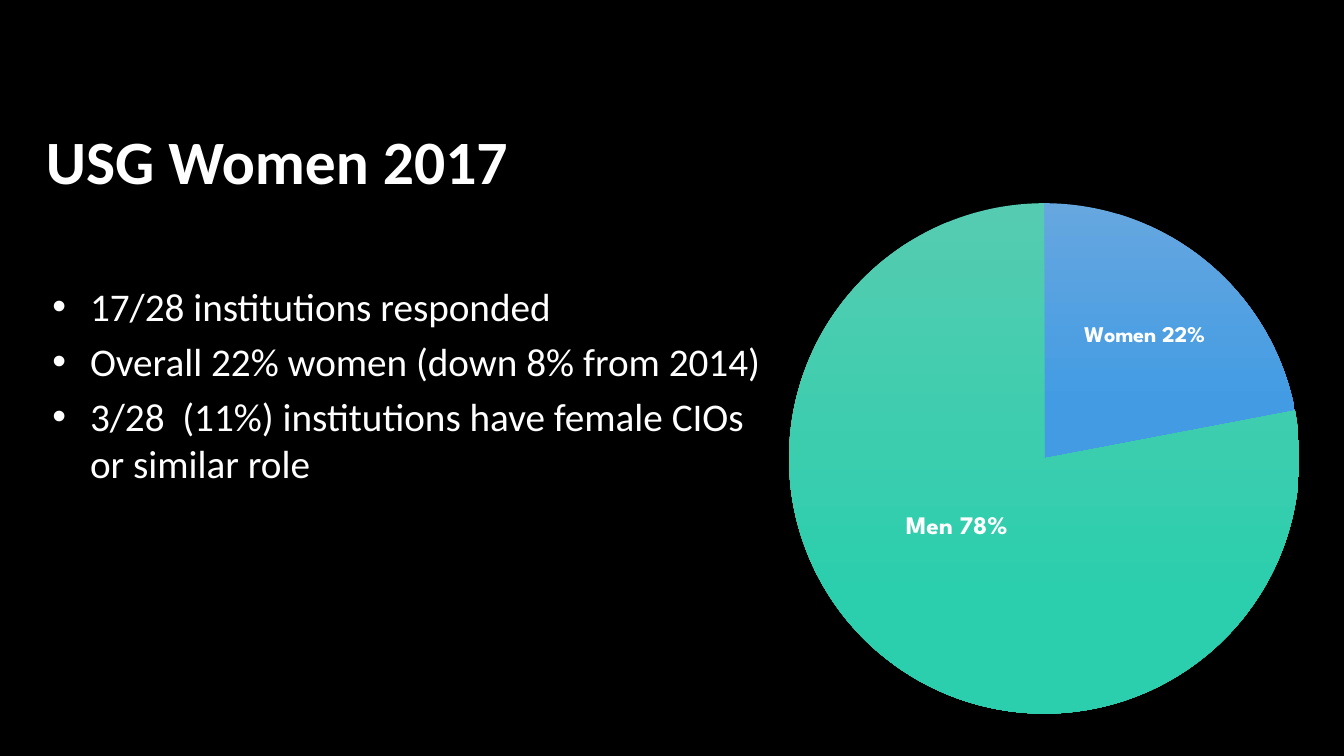
"""Build the USG Women 2017 slide with its bullets and pie chart."""
from lxml.etree import SubElement
from pptx import Presentation
from pptx.chart.data import CategoryChartData
from pptx.dml.color import RGBColor
from pptx.enum.chart import XL_CHART_TYPE as ChartType, XL_LABEL_POSITION as LabelPosition
from pptx.oxml import parse_xml
from pptx.oxml.ns import nsdecls, qn
from pptx.util import Cm, Pt


def color(value):
    return RGBColor.from_string(value)


def make_layout(**settings):
    layout = parse_xml(f"<c:layout {nsdecls('c')}><c:manualLayout/></c:layout>")
    for name, value in settings.items():
        SubElement(layout[0], qn(f"c:{name}")).set("val", str(value))
    return layout


WHITE = color("FFFFFF")
BULLETS = [
    "17/28 institutions responded",
    "Overall 22% women (down 8% from 2014)",
    "3/28  (11%) institutions have female CIOs or similar role",
]
SLICES = [
    ("Women", 0.22, "66A7E0", "439CE3", "Women 22%", 16, 0.03, -0.04),
    ("Men", 0.78, "55CCB1", "2BCEAD", "Men 78%", 18, -0.01, -0.05),
]

deck = Presentation()
deck.slide_width, deck.slide_height = Cm(33.87), Cm(19.05)
page = deck.slides.add_slide(deck.slide_layouts[6])
page.background.fill.solid()
page.background.fill.fore_color.rgb = color("000000")

title = page.shapes.add_textbox(Cm(0.91), Cm(3.18), Cm(27.25), Cm(2.34)).text_frame
title.word_wrap = True
para = title.paragraphs[0]
para.text = "USG Women 2017"
para.line_spacing = 0.9
para.font.name, para.font.size, para.font.bold = "Calibri", Pt(44), True
para.font.color.rgb = WHITE

body = page.shapes.add_textbox(Cm(1.07), Cm(6.99), Cm(18.42), Cm(10.59)).text_frame
body.word_wrap = True
for index, text in enumerate(BULLETS):
    para = body.paragraphs[0] if index == 0 else body.add_paragraph()
    para.text = text
    if index:
        para.space_before = Pt(5.6)
    properties = para._p.get_or_add_pPr()
    properties.set("marL", str(Cm(0.95)))
    properties.set("indent", str(Cm(-0.95)))
    SubElement(properties, qn("a:buFont")).set("typeface", "Arial")
    SubElement(properties, qn("a:buChar")).set("char", "•")
    para.font.name, para.font.size = "Calibri", Pt(28)
    para.font.color.rgb = WHITE

data = CategoryChartData(number_format="0%")
data.categories = [piece[0] for piece in SLICES]
data.add_series("Series 1", [piece[1] for piece in SLICES])
chart = page.shapes.add_chart(
    ChartType.PIE, Cm(17.98), Cm(4.24), Cm(15.88), Cm(14.2), data
).chart
chart.has_title = chart.has_legend = False
chart.font.name, chart.font.size = "League Spartan", Pt(10)
chart.font.color.rgb = WHITE

plot = chart.plots[0]
plot.vary_by_categories = True
plot_area = chart._chartSpace.chart.plotArea
for old_layout in plot_area.findall(qn("c:layout")):
    plot_area.remove(old_layout)
plot_area.insert(0, make_layout(
    layoutTarget="inner", xMode="edge", yMode="edge", x=0.12, y=0.06, w=0.81, h=0.91))

series = plot.series[0]
labels = series.data_labels
labels.show_category_name = labels.show_value = True
labels.number_format, labels.number_format_is_linked = "0%", False
labels.font.name, labels.font.size, labels.font.bold = "League Spartan", Pt(12), True
labels.font.color.rgb = WHITE

for index, (_, _, top, bottom, text, size, shift_x, shift_y) in enumerate(SLICES):
    point = series.points[index]
    fill = point.format.fill
    fill.gradient()
    fill.gradient_angle = 270
    for stop, value, position in zip(fill.gradient_stops, (top, bottom), (0, 0.78)):
        stop.color.rgb = color(value)
        stop.position = position
    point.format.line.fill.background()

    label = point.data_label
    span = label.text_frame.paragraphs[0].add_run()
    span.text = text
    span.font.name, span.font.size, span.font.bold = "League Spartan", Pt(size), True
    span.font.color.rgb = WHITE
    label.position = LabelPosition.CENTER
    label._dLbl.insert(1, make_layout(x=shift_x, y=shift_y))
    label._dLbl.find(qn("c:showCatName")).set("val", "1")

deck.save("out.pptx")
